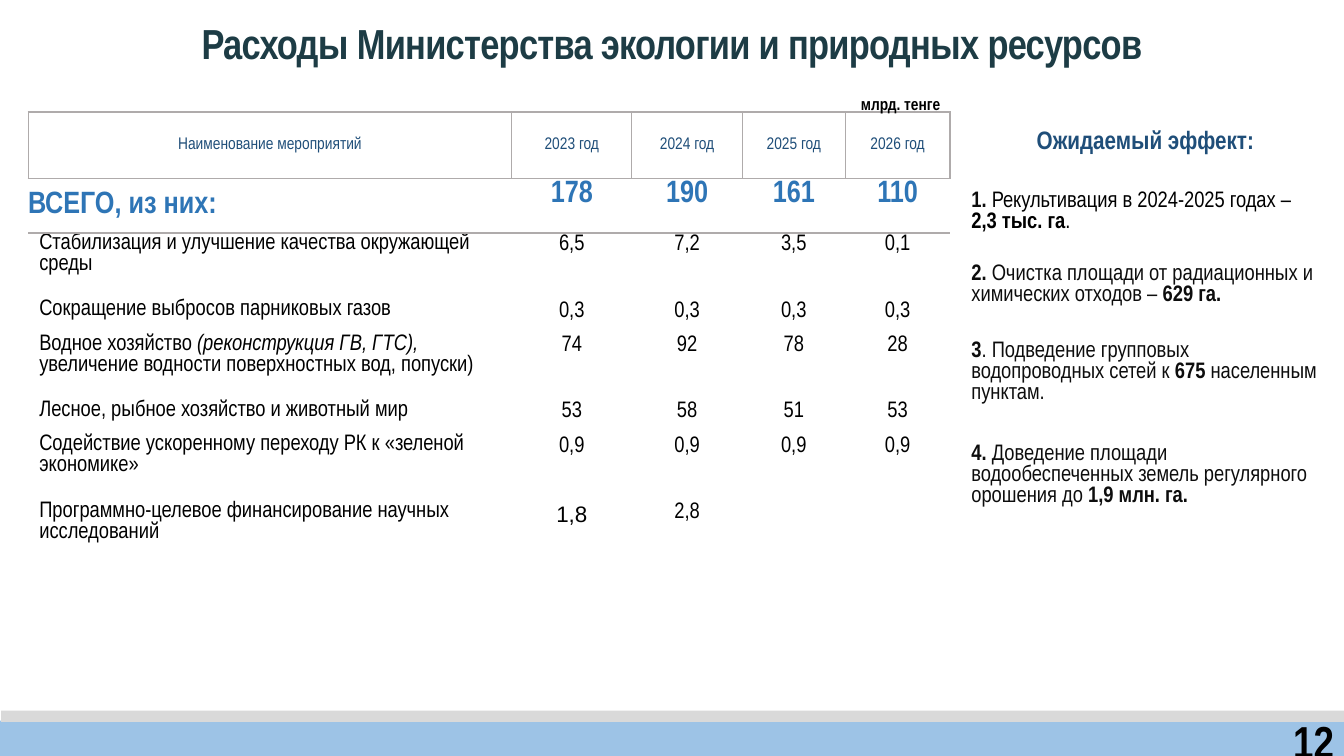
from typing import NamedTuple

from lxml import etree
from pptx import Presentation
from pptx.dml.color import RGBColor
from pptx.enum.shapes import MSO_SHAPE
from pptx.enum.text import MSO_ANCHOR, MSO_AUTO_SIZE, PP_ALIGN
from pptx.oxml.ns import qn
from pptx.util import Cm, Pt

LEFT, CENTER, RIGHT = PP_ALIGN.LEFT, PP_ALIGN.CENTER, PP_ALIGN.RIGHT
TOP, MIDDLE, BOTTOM = MSO_ANCHOR.TOP, MSO_ANCHOR.MIDDLE, MSO_ANCHOR.BOTTOM
RECTANGLE = MSO_SHAPE.RECTANGLE
NO_AUTOFIT = MSO_AUTO_SIZE.NONE

PAGE_WIDTH, PAGE_HEIGHT = 33.87, 19.05
PLAIN_TABLE = "{2D5ABB26-0587-4C30-8999-92F81FD0307C}"
BLACK, WHITE, INK, NAVY, BLUE = "000000", "FFFFFF", "0D0D0D", "1F4E79", "2E75B6"
NO_MARGINS = (0, 0, 0, 0)
NAME_MARGINS = (0.28, 0, 0, 0)
VALUE_MARGINS = (0.03, 0.03, 0.03, 0)
TEXT_MARGINS = (0.25, 0.13, 0.25, 0.13)


class Span(NamedTuple):
    text: str
    bold: bool | None = None
    italic: bool | None = None
    color: str | None = None


YEARS = ["2023 год", "2024 год", "2025 год", "2026 год"]
TOTALS = ["178", "190", "161", "110"]
# name, values, row height, white fill
MEASURES = [
    ("Стабилизация и улучшение качества окружающей среды",
     ["6,5", "7,2", "3,5", "0,1"], 1.68, True),
    ("Сокращение выбросов парниковых газов",
     ["0,3", "0,3", "0,3", "0,3"], 0.86, False),
    ([Span("Водное хозяйство "),
      Span("(реконструкция ГВ, ГТС), ", italic=True),
      Span("увеличение водности поверхностных вод, попуски)")],
     ["74", "92", "78", "28"], 1.68, False),
    ("Лесное, рыбное хозяйство и животный мир",
     ["53", "58", "51", "53"], 0.86, False),
    ("Содействие ускоренному переходу РК к «зеленой экономике»",
     ["0,9", "0,9", "0,9", "0,9"], 1.68, True),
    ("Программно-целевое финансирование научных исследований",
     ["1,8", "2,8", "", ""], 1.68, True),
]
EFFECTS = [
    [Span("1. ", True), Span("Рекультивация в 2024-2025 годах – ", color=BLACK),
     Span("2,3 тыс. га", True, color=BLACK), Span(".", color=BLACK)],
    [Span("2.", True), Span(" Очистка площади от радиационных и химических отходов – "),
     Span("629 га.", True)],
    [Span("3", True), Span(". Подведение групповых водопроводных сетей к "),
     Span("675", True), Span(" населенным пунктам.")],
    [Span("4.", True),
     Span(" Доведение площади водообеспеченных земель регулярного орошения до "),
     Span("1,9 млн. га.", True)],
]


def rgb(color):
    return RGBColor.from_string(color)


class SlideBuilder:
    font = "Arial Narrow"
    border_color = "AFABAB"

    def __init__(self, page):
        self.page = page

    def set_text(self, frame, content, size, color, bold=False, align=LEFT,
                 line_spacing=None, font=None):
        """Fill the first paragraph with a string or a list of spans."""
        para = frame.paragraphs[0]
        para.alignment = align
        para.line_spacing = line_spacing
        para.font.name = font or self.font
        para.font.size = Pt(size)
        para.font.bold = bold
        para.font.color.rgb = rgb(color)
        spans = [Span(content)] if isinstance(content, str) else content
        for span in spans:
            run = para.add_run()
            run.text = span.text
            run.font.bold = span.bold
            run.font.italic = span.italic
            if span.color:
                run.font.color.rgb = rgb(span.color)
        return para

    def title(self, text, left, top, width, height):
        box = self.page.shapes.title
        box.left, box.top, box.width, box.height = map(Cm, (left, top, width, height))
        frame = box.text_frame
        frame.auto_size = NO_AUTOFIT
        frame.word_wrap = True
        frame.vertical_anchor = BOTTOM
        para = self.set_text(frame, text, 30, "1D3C45", True, CENTER, 1.1)
        para.runs[0].font._element.set("spc", "-50")

    def label(self, text, left, top, width, height):
        box = self.page.shapes.add_textbox(*map(Cm, (left, top, width, height)))
        frame = box.text_frame
        frame.word_wrap = True
        frame.vertical_anchor = MIDDLE
        self.set_text(frame, text, 12, BLACK, True, RIGHT, 1.1)

    def bar(self, left, top, width, height, color, text=""):
        shape = self.page.shapes.add_shape(RECTANGLE, *map(Cm, (left, top, width, height)))
        shape.shadow.inherit = False
        shape.fill.solid()
        shape.fill.fore_color.rgb = rgb(color)
        shape.line.fill.background()
        if text:
            shape.text_frame.vertical_anchor = MIDDLE
            self.set_text(shape.text_frame, text, 32, BLACK, True, RIGHT)

    def table(self, left, top, widths, heights):
        frame = self.page.shapes.add_table(
            len(heights), len(widths),
            *map(Cm, (left, top, sum(widths), sum(heights))))
        table = frame.table
        table.first_row = table.horz_banding = False
        table._tbl.tblPr.find(qn("a:tableStyleId")).text = PLAIN_TABLE
        for column, width in zip(table.columns, widths):
            column.width = Cm(width)
        for row, height in zip(table.rows, heights):
            row.height = Cm(height)
        return table

    def cell(self, cell, content, size, color, margins, anchor=TOP, fill=None, **style):
        cell.margin_left, cell.margin_top, cell.margin_right, cell.margin_bottom = map(
            Cm, margins)
        cell.vertical_anchor = anchor
        if fill:
            cell.fill.solid()
            cell.fill.fore_color.rgb = rgb(fill)
        else:
            cell.fill.background()
        if content:
            self.set_text(cell.text_frame, content, size, color, **style)

    def borders(self, cell, sides):
        properties = cell._tc.get_or_add_tcPr()
        for index, side in enumerate(sides):
            line = etree.Element(qn(f"a:ln{side}"), w=str(Pt(1)))
            fill = etree.SubElement(line, qn("a:solidFill"))
            etree.SubElement(fill, qn("a:srgbClr"), val=self.border_color)
            properties.insert(index, line)

    def spending_table(self):
        heights = [1.68, 1.37] + [height for _, _, height, _ in MEASURES]
        table = self.table(0.71, 2.82, [12.19, 3.02, 2.79, 2.59, 2.64], heights)
        for column, text in enumerate(["Наименование мероприятий"] + YEARS):
            header = table.cell(0, column)
            self.cell(header, text, 12, NAVY, NO_MARGINS, MIDDLE, align=CENTER)
            self.borders(header, "LRTB")
        self.cell(table.cell(1, 0), "ВСЕГО, из них:", 22, BLUE, NO_MARGINS, MIDDLE, bold=True)
        for column, total in enumerate(TOTALS, 1):
            self.cell(table.cell(1, column), total, 22, BLUE, VALUE_MARGINS,
                      bold=True, align=CENTER)
        for column in range(len(TOTALS) + 1):
            self.borders(table.cell(1, column), "T")
        for row, (name, values, _, filled) in enumerate(MEASURES, 2):
            fill = WHITE if filled else None
            self.cell(table.cell(row, 0), name, 16, BLACK, NAME_MARGINS, fill=fill)
            for column, value in enumerate(values, 1):
                self.cell(table.cell(row, column), value, 16, BLACK, VALUE_MARGINS,
                          fill=fill, align=CENTER,
                          font="Arial" if value == "1,8" else None)

    def effects_table(self):
        table = self.table(24.23, 2.79, [9.27], [1.65, 1.83, 1.83, 2.59, 2.59, 1.07])
        self.cell(table.cell(0, 0), "Ожидаемый эффект:", 18, NAVY, TEXT_MARGINS, MIDDLE,
                  bold=True, align=CENTER)
        for row, effect in enumerate(EFFECTS + [""], 1):
            self.cell(table.cell(row, 0), effect, 16, INK, TEXT_MARGINS, MIDDLE)


def main():
    deck = Presentation()
    deck.slide_width, deck.slide_height = Cm(PAGE_WIDTH), Cm(PAGE_HEIGHT)
    builder = SlideBuilder(deck.slides.add_slide(deck.slide_layouts[5]))
    builder.bar(0, 18.16, PAGE_WIDTH, 1.02, "9DC3E6", "12")
    builder.bar(0.03, 17.91, PAGE_WIDTH, 0.28, "D9D9D9")
    builder.title("Расходы Министерства экологии и природных ресурсов",
                  0, 0.66, PAGE_WIDTH, 1.17)
    builder.spending_table()
    builder.label("млрд. тенге", 20.9, 2.26, 3.05, 0.64)
    builder.effects_table()
    deck.save("out.pptx")


if __name__ == "__main__":
    main()
